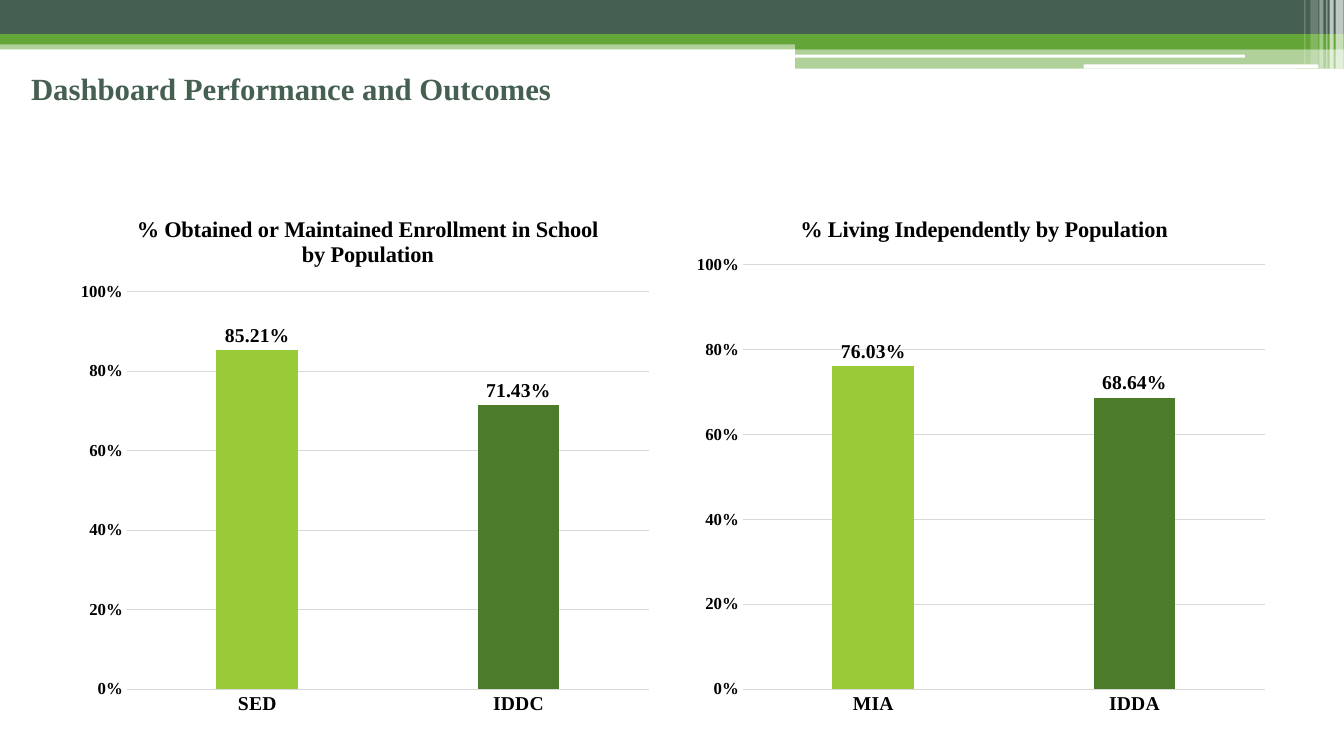
"""Build the dashboard slide with a banded header and two outcome charts."""
import pptx
import pptx.chart.data
import pptx.dml.color
import pptx.enum.chart
import pptx.enum.shapes
import pptx.enum.text
import pptx.oxml
import pptx.oxml.ns
import pptx.util

Pt = pptx.util.Pt
qn = pptx.oxml.ns.qn
Kind = pptx.enum.shapes.MSO_SHAPE
Tick = pptx.enum.chart.XL_TICK_MARK


class Theme:
    face = "Times New Roman"
    slate, green, white, black = "455F51", "63A537", "FFFFFF", "000000"
    lime, forest, grid = "99CB38", "4A7C29", "D9D9D9"
    head, title, label, scale = 22, 16, 14, 12


def style(font, size, color):
    form = {"name": Theme.face, "size": Pt(size), "bold": True}
    for key, value in form.items():
        setattr(font, key, value)
    font.color.rgb = pptx.dml.color.RGBColor.from_string(color)


def place(node, index, **spots):
    for old in node.findall(qn("c:layout")):
        node.remove(old)
    layout = pptx.oxml.parse_xml(
        '<c:layout xmlns:c="http://schemas.openxmlformats.org/drawingml/2006/chart">'
        "<c:manualLayout/></c:layout>")
    for tag, value in spots.items():
        item = layout[0].makeelement(qn("c:" + tag), {"val": str(value)})
        layout[0].append(item)
    node.insert(index, layout)


deck = pptx.Presentation()
deck.slide_width, deck.slide_height = Pt(960), Pt(540)
slide = deck.slides.add_slide(deck.slide_layouts[6])

bands = [
    (0, 28.8, 960, 6.5, Theme.green, 50, Kind.RECTANGLE),
    (0, 0, 960, 24.5, Theme.slate, 100, Kind.RECTANGLE),
    (0, 24.5, 960, 7.2, Theme.green, 100, Kind.RECTANGLE),
    (568, 28.1, 392, 7.2, Theme.green, 100, Kind.RECTANGLE),
    (568, 34.6, 392, 14.4, Theme.green, 50, Kind.RECTANGLE),
    (567.4, 39, 321.8, 2.2, Theme.white, 100, Kind.ROUNDED_RECTANGLE),
    (774, 46.1, 167.8, 2.9, Theme.white, 100, Kind.ROUNDED_RECTANGLE),
]
bars = [
    (954, 5.8, 49, 65), (949.7, 2.9, 49, 65), (947.5, 0.7, 49, 60),
    (942.5, 2.9, 49, 40), (936, 5.8, 46.1, 20), (931.7, 0.7, 46.1, 30),
]
bands += [(left, 0, wide, high, Theme.white, alpha, Kind.RECTANGLE)
          for left, wide, high, alpha in bars]

for left, top, wide, high, color, alpha, kind in bands:
    band = slide.shapes.add_shape(kind, Pt(left), Pt(top), Pt(wide), Pt(high))
    band.shadow.inherit = False
    band.line.fill.background()
    band.fill.solid()
    band.fill.fore_color.rgb = pptx.dml.color.RGBColor.from_string(color)
    if alpha < 100:
        tint = band._element.spPr.find(".//" + qn("a:srgbClr"))
        tint.append(tint.makeelement(qn("a:alpha"), {"val": str(alpha * 1000)}))

box = slide.shapes.add_textbox(Pt(15.1), Pt(20.9), Pt(864), Pt(84.2))
frame = box.text_frame
frame.word_wrap = True
frame.vertical_anchor = pptx.enum.text.MSO_ANCHOR.MIDDLE
run = frame.paragraphs[0].add_run()
run.text = "Dashboard Performance and Outcomes"
style(run.font, Theme.head, Theme.slate)

panels = [
    (48.2, "% Obtained or Maintained Enrollment in School by Population",
     ("SED", "IDDC"), (0.8521, 0.7143), 0.11, 0.19),
    (488.2, "% Living Independently by Population",
     ("MIA", "IDDA"), (0.7603, 0.6864), 0.19, 0.14),
]
for left, title, groups, rates, inset, top in panels:
    data = pptx.chart.data.CategoryChartData(number_format="0.00%")
    data.categories = groups
    data.add_series("Series 1", rates)
    chart = slide.shapes.add_chart(
        pptx.enum.chart.XL_CHART_TYPE.COLUMN_CLUSTERED,
        Pt(left), Pt(135.4), Pt(424), Pt(383.8), data).chart
    chart.has_legend = False
    chart.has_title = True
    chart.chart_title.include_in_layout = False
    run = chart.chart_title.text_frame.paragraphs[0].add_run()
    run.text = title
    style(run.font, Theme.title, Theme.black)
    place(chart.chart_title._element, 1,
          xMode="edge", yMode="edge", x=inset, y=0.04)
    place(chart._chartSpace.chart.plotArea, 0, layoutTarget="inner",
          xMode="edge", yMode="edge", x=0.1, y=top, w=0.88, h=0.93 - top)

    across, up = chart.category_axis, chart.value_axis
    style(across.tick_labels.font, Theme.label, Theme.black)
    style(up.tick_labels.font, Theme.scale, Theme.black)
    for axis in (across, up):
        axis.major_tick_mark = axis.minor_tick_mark = Tick.NONE
    span = {"minimum_scale": 0, "maximum_scale": 1, "major_unit": 0.2,
            "has_major_gridlines": True}
    for key, value in span.items():
        setattr(up, key, value)
    up.tick_labels.number_format = "0%"
    up.tick_labels.number_format_is_linked = False
    up.format.line.fill.background()
    for line in (across.format.line, up.major_gridlines.format.line):
        line.width = Pt(0.75)
        line.color.rgb = pptx.dml.color.RGBColor.from_string(Theme.grid)

    plot = chart.plots[0]
    form = {"gap_width": 219, "overlap": -27, "vary_by_categories": False,
            "has_data_labels": True}
    for key, value in form.items():
        setattr(plot, key, value)
    marks = plot.data_labels
    form = {"show_value": True, "number_format": "0.00%",
            "number_format_is_linked": False,
            "position": pptx.enum.chart.XL_LABEL_POSITION.OUTSIDE_END}
    for key, value in form.items():
        setattr(marks, key, value)
    style(marks.font, Theme.label, Theme.black)
    series = plot.series[0]
    for part, color in ((series, Theme.lime), (series.points[1], Theme.forest)):
        part.format.fill.solid()
        part.format.fill.fore_color.rgb = pptx.dml.color.RGBColor.from_string(color)

deck.save("out.pptx")
